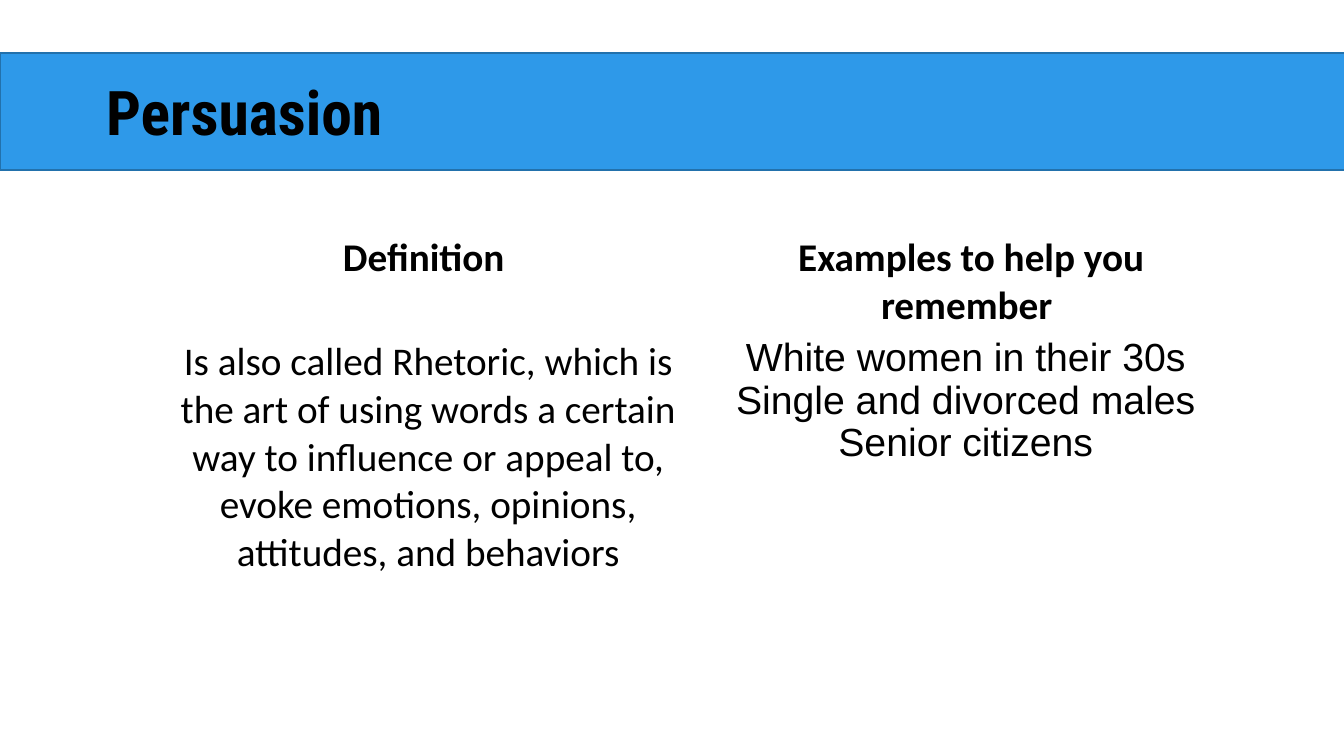
from pptx import Presentation
from pptx.dml.color import RGBColor as Color
from pptx.enum.shapes import MSO_SHAPE as Shape
from pptx.enum.text import MSO_ANCHOR as Anchor, MSO_AUTO_SIZE as AutoSize, PP_ALIGN as Align
from pptx.util import Emu, Pt

COLORS = {"bar": "2E99E9", "edge": "2271AC", "text": "000000"}
COLUMNS = [15, 554, 532]
ROWS = [104, 379]
HEADINGS = ["Definition ", "Examples to help you remember "]
DEFINITION = (
    "Is also called Rhetoric, which is the art of using words a certain way to "
    "influence or appeal to, evoke emotions, opinions, attitudes, and behaviors"
)
EXAMPLES = ["White women in their 30s ", "Single and divorced males ", "Senior citizens "]


def px(length):
    return Emu(round(length * 914400 / 100.8))


def color(name):
    return Color.from_string(COLORS[name])


def apply(target, formats):
    for name, value in formats.items():
        setattr(target, name, value)


def write(frame, lines, font, para_format):
    frame.text = "\n".join(lines)
    for para in frame.paragraphs:
        apply(para, para_format)
        for span in para.runs:
            apply(span.font, font)
            span.font.color.rgb = color("text")


def add_header(page, left, top, width, height):
    bar = page.shapes.add_shape(Shape.RECTANGLE, px(left), px(top), px(width), px(height))
    bar.shadow.inherit = False
    bar.fill.solid()
    bar.fill.fore_color.rgb = color("bar")
    bar.line.color.rgb = color("edge")
    bar.line.width = Pt(1)
    title = page.shapes.title
    title.element.addprevious(bar.element)
    apply(title, {"left": px(left + 96), "top": px(top + 21), "width": px(1159), "height": px(159)})
    apply(title.text_frame, {
        "vertical_anchor": Anchor.TOP, "word_wrap": True, "auto_size": AutoSize.NONE,
    })
    write(
        title.text_frame, ["Persuasion"],
        {"name": "Roboto Condensed", "size": Pt(44), "bold": True},
        {"alignment": Align.LEFT, "line_spacing": 0.95},
    )


def fill_cell(cell, lines, margin, font, spacing):
    apply(cell, {
        "margin_left": px(margin), "margin_right": px(margin),
        "margin_top": 0, "margin_bottom": 0, "vertical_anchor": Anchor.TOP,
    })
    write(
        cell.text_frame, lines, {"size": Pt(28), **font},
        {"alignment": Align.CENTER, "line_spacing": spacing},
    )


def add_comparison(page, left, top, width, height):
    frame = page.shapes.add_table(
        len(ROWS), len(COLUMNS), px(left), px(top), px(width), px(height)
    )
    table = frame.table
    apply(table, {"first_row": False, "horz_banding": False})
    for column, size in zip(table.columns, COLUMNS):
        column.width = px(size)
    for row, size in zip(table.rows, ROWS):
        row.height = px(size)
    for cell in table.iter_cells():
        cell.fill.background()
    for index, heading in enumerate(HEADINGS, start=1):
        fill_cell(table.cell(0, index), [heading], 6, {"name": "Calibri", "bold": True}, 1.0)
    fill_cell(table.cell(1, 1), [DEFINITION], 5, {"name": "Calibri", "bold": False}, 1.0)
    fill_cell(table.cell(1, 2), EXAMPLES, 5, {"name": "Arial", "bold": False}, 0.97)


def main():
    deck = Presentation()
    apply(deck, {"slide_width": px(1344), "slide_height": px(756)})
    page = deck.slides.add_slide(deck.slide_layouts[5])
    add_header(page, 0, 53, 1350, 117)
    add_comparison(page, 127, 234, sum(COLUMNS), sum(ROWS))
    deck.save("out.pptx")


if __name__ == "__main__":
    main()
